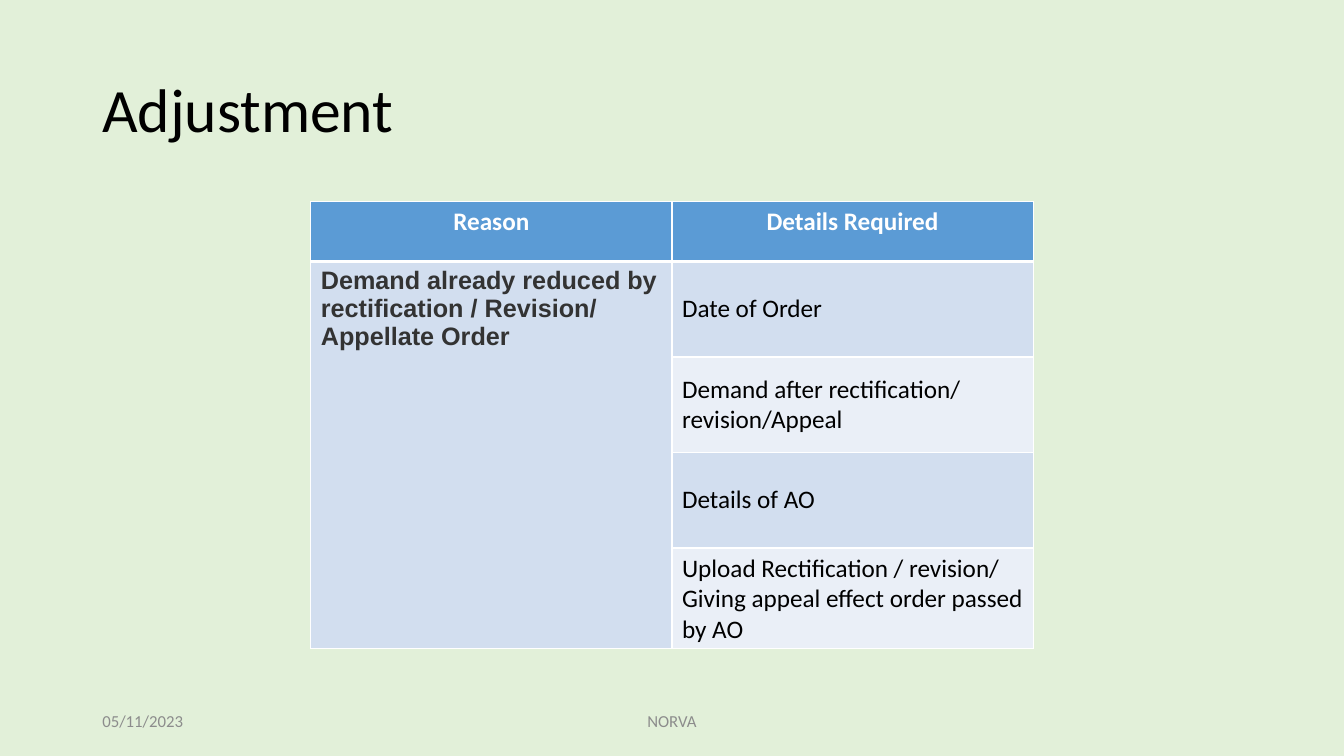
from dataclasses import dataclass

from lxml import etree
from pptx import Presentation
from pptx.dml.color import RGBColor
from pptx.enum.text import MSO_ANCHOR, PP_ALIGN
from pptx.oxml.ns import qn
from pptx.util import Emu, Pt

PX = 9525  # EMU in one px, 96 px to the inch
LEFT, CENTER = PP_ALIGN.LEFT, PP_ALIGN.CENTER
TOP, MIDDLE = MSO_ANCHOR.TOP, MSO_ANCHOR.MIDDLE

GREEN = RGBColor(0xE2, 0xF0, 0xD9)
BLUE = RGBColor(0x5B, 0x9B, 0xD5)
BAND = RGBColor(0xD2, 0xDE, 0xEF)
PALE = RGBColor(0xEA, 0xEF, 0xF7)
WHITE = RGBColor(0xFF, 0xFF, 0xFF)
BLACK = RGBColor(0x00, 0x00, 0x00)
DARK = RGBColor(0x33, 0x33, 0x33)
GRAY = RGBColor(0x8C, 0x8C, 0x8C)


@dataclass(frozen=True)
class Style:
    size: int
    color: RGBColor
    font: str = "Calibri"
    bold: bool = False
    align: PP_ALIGN = LEFT


@dataclass(frozen=True)
class Label:
    text: str
    left: int
    top: int
    width: int
    height: int
    style: Style
    spacing: float = 1.0


@dataclass(frozen=True)
class Entry:
    row: int
    col: int
    text: str
    style: Style
    fill: RGBColor
    anchor: MSO_ANCHOR = TOP


HEAD = Style(18, WHITE, bold=True, align=CENTER)
CAUSE = Style(18, DARK, font="Arial", bold=True)
BODY = Style(18, BLACK)

LABELS = [
    Label("Adjustment", 88, 38, 1104, 139, Style(44, BLACK), 0.9),
    Label("05/11/2023", 88, 667, 288, 38, Style(12, GRAY)),
    Label("NORVA", 424, 667, 432, 38, Style(12, GRAY, align=CENTER)),
]

DETAILS = [
    "Date of Order",
    "Demand after rectification/ revision/Appeal",
    "Details of AO",
    "Upload Rectification / revision/ Giving appeal effect order passed by AO",
]
ENTRIES = [
    Entry(0, 0, "Reason", HEAD, BLUE),
    Entry(0, 1, "Details Required", HEAD, BLUE),
    Entry(1, 0, "Demand already reduced by rectification / Revision/ Appellate Order",
          CAUSE, BAND),
] + [
    Entry(row, 1, text, BODY, BAND if row % 2 else PALE, MIDDLE)
    for row, text in enumerate(DETAILS, start=1)
]

COL_W, HEAD_H, ROW_H = 344, 57, 91


def px(count: int) -> Emu:
    return Emu(count * PX)


def write(frame, text: str, style: Style, spacing: float = 1.0) -> None:
    frame.word_wrap = True
    para = frame.paragraphs[0]
    para.alignment = style.align
    para.line_spacing = spacing
    run = para.add_run()
    run.text = text
    run.font.size = Pt(style.size)
    run.font.name = style.font
    run.font.bold = style.bold
    run.font.color.rgb = style.color


def add_label(slide, label: Label) -> None:
    box = slide.shapes.add_textbox(
        px(label.left), px(label.top), px(label.width), px(label.height))
    box.text_frame.vertical_anchor = MIDDLE
    write(box.text_frame, label.text, label.style, label.spacing)


def add_edges(cell, row: int) -> None:
    """Rule the cell in white, with a thick line under the header row."""
    widths = {"a:lnL": 1, "a:lnR": 1,
              "a:lnT": 3 if row == 1 else 1,
              "a:lnB": 3 if row == 0 else 1}
    props = cell._tc.get_or_add_tcPr()
    for tag, width in widths.items():
        line = etree.SubElement(props, qn(tag), w=str(Pt(width)))
        fill = etree.SubElement(line, qn("a:solidFill"))
        etree.SubElement(fill, qn("a:srgbClr"), val=str(WHITE))


def add_grid(slide) -> None:
    rows = len(DETAILS) + 1
    height = HEAD_H + ROW_H * len(DETAILS)
    table = slide.shapes.add_table(
        rows, 2, px(296), px(192), px(2 * COL_W), px(height)).table
    for col in table.columns:
        col.width = px(COL_W)
    for index, row in enumerate(table.rows):
        row.height = px(ROW_H if index else HEAD_H)
        for cell in row.cells:
            add_edges(cell, index)
    table.cell(1, 0).merge(table.cell(rows - 1, 0))
    for entry in ENTRIES:
        cell = table.cell(entry.row, entry.col)
        cell.fill.solid()
        cell.fill.fore_color.rgb = entry.fill
        cell.vertical_anchor = entry.anchor
        write(cell.text_frame, entry.text, entry.style)


def main() -> None:
    deck = Presentation()
    deck.slide_width, deck.slide_height = px(1280), px(720)
    slide = deck.slides.add_slide(deck.slide_layouts[6])
    slide.background.fill.solid()
    slide.background.fill.fore_color.rgb = GREEN
    for label in LABELS:
        add_label(slide, label)
    add_grid(slide)
    deck.save("out.pptx")


if __name__ == "__main__":
    main()
